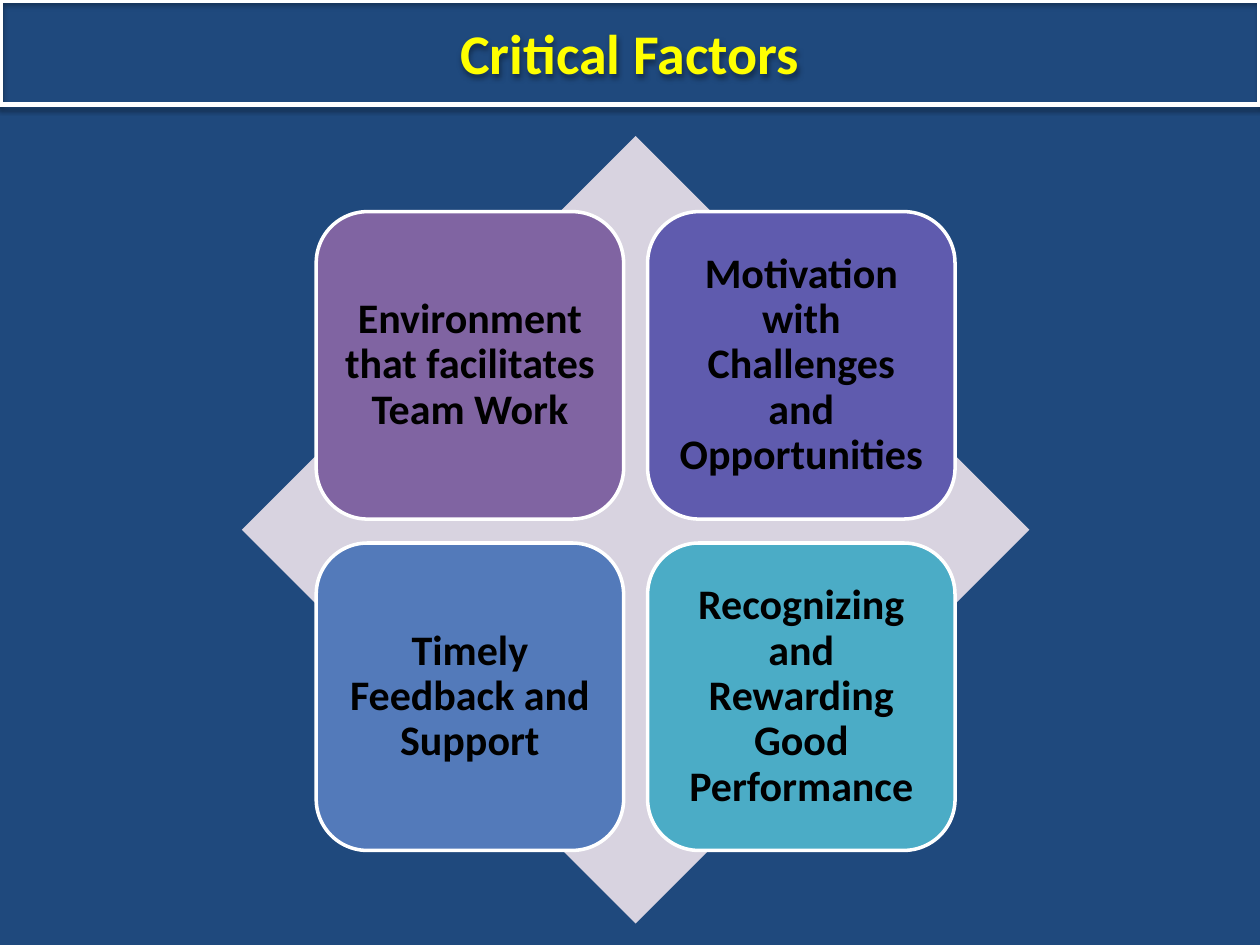
from dataclasses import dataclass

from lxml import etree
from pptx import Presentation
from pptx.dml.color import RGBColor
from pptx.enum.shapes import MSO_SHAPE as Shape
from pptx.enum.text import MSO_ANCHOR as Anchor, MSO_AUTO_SIZE as AutoSize, PP_ALIGN as Align
from pptx.oxml import parse_xml
from pptx.util import Inches, Pt


@dataclass(frozen=True)
class Theme:
    font: str = "Calibri"
    background: str = "1F497D"
    title: str = "FFFF00"
    outline: str = "FFFFFF"
    text: str = "000000"
    diamond: str = "D8D3E0"
    title_size: int = 32
    factor_size: int = 24


theme = Theme()
SHADOW = """<a:effectLst xmlns:a="http://schemas.openxmlformats.org/drawingml/2006/main">
<a:outerShdw blurRad="39370" dist="20320" dir="5400000" rotWithShape="0">
<a:srgbClr val="000000"><a:alpha val="38000"/></a:srgbClr></a:outerShdw></a:effectLst>"""


def set_text(box, text, size, color):
    """Write one bold, centred paragraph in the middle of the box."""
    frame = box.text_frame
    frame.text = text
    frame.word_wrap = True
    frame.auto_size = AutoSize.NONE
    frame.vertical_anchor = Anchor.MIDDLE
    para = frame.paragraphs[0]
    para.alignment = Align.CENTER
    font = para.runs[0].font
    font.name, font.size, font.bold = theme.font, Pt(size), True
    font.color.rgb = RGBColor.from_string(color)
    return para


def set_outline(box, width):
    box.line.color.rgb = RGBColor.from_string(theme.outline)
    box.line.width = Pt(width)


deck = Presentation()
deck.slide_width, deck.slide_height = Inches(10), Inches(7.5)
page = deck.slides.add_slide(deck.slide_layouts[5])
page.background.fill.solid()
page.background.fill.fore_color.rgb = RGBColor.from_string(theme.background)

# Title bar
title = page.shapes.title
title.left, title.top, title.width, title.height = Inches(0), Inches(0), Inches(10), Inches(0.83)
title.fill.background()
set_outline(title, 3)
title.element.spPr.append(parse_xml(SHADOW))
set_text(title, "Critical Factors", theme.title_size, theme.title)

# Diamond behind the factors
diamond = page.shapes.add_shape(
    Shape.DIAMOND, Inches(1.92), Inches(1.08), Inches(6.25), Inches(6.25))
diamond.shadow.inherit = False
diamond.fill.solid()
diamond.fill.fore_color.rgb = RGBColor.from_string(theme.diamond)
diamond.line.fill.background()

# Two-by-two grid of factors
factors = [
    ("Environment that facilitates Team Work", "8064A2"),
    ("Motivation with Challenges and Opportunities", "5F5BAE"),
    ("Timely Feedback and Support", "537ABA"),
    ("Recognizing and Rewarding Good Performance", "4BACC6"),
]
left, top, side, step = 2.51, 1.68, 2.44, 2.63
for index, (text, color) in enumerate(factors):
    row, column = divmod(index, 2)
    box = page.shapes.add_shape(
        Shape.ROUNDED_RECTANGLE, Inches(left + column * step), Inches(top + row * step),
        Inches(side), Inches(side))
    box.shadow.inherit = False
    box.fill.solid()
    box.fill.fore_color.rgb = RGBColor.from_string(color)
    set_outline(box, 2)
    frame = box.text_frame
    frame.margin_left = frame.margin_right = Inches(0.1)
    frame.margin_top = frame.margin_bottom = Inches(0.1)
    para = set_text(box, text, theme.factor_size, theme.text)
    para.line_spacing = 0.9

deck.save("out.pptx")
